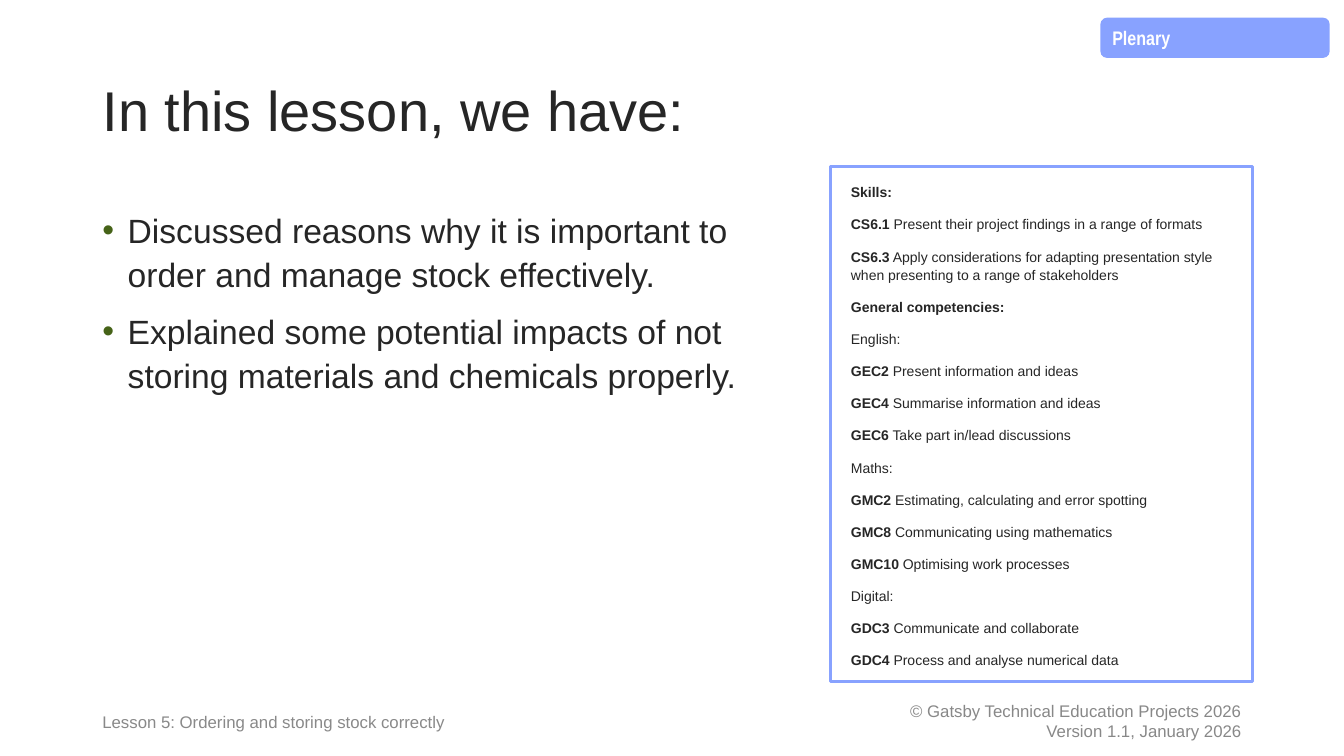
from lxml import etree
from pptx import Presentation, util as u
from pptx.dml.color import RGBColor
from pptx.enum import shapes, text
from pptx.oxml import ns

INK = RGBColor(0x26, 0x26, 0x26)
WHITE = RGBColor(0xFF, 0xFF, 0xFF)
PERIWINKLE = RGBColor(0x88, 0xA2, 0xFF)
BULLET_GREEN = RGBColor(0x46, 0x63, 0x18)
FOOTER_GREY = RGBColor(0x89, 0x89, 0x89)
COPYRIGHT_GREY = RGBColor(0x88, 0x88, 0x88)

SLIDE_WIDTH, SLIDE_HEIGHT = u.Inches(13.33), u.Inches(7.5)
COLUMNS, ROWS = 160, 90
BODY_SPACING = 1.08

LESSON_POINTS = [
    "Discussed reasons why it is important to order and manage stock effectively.",
    "Explained some potential impacts of not storing materials and chemicals properly.",
]
COMPETENCIES = [
    ("Skills:", ""),
    ("CS6.1", " Present their project findings in a range of formats"),
    ("CS6.3", " Apply considerations for adapting presentation style"
              " when presenting to a range of stakeholders"),
    ("General competencies:", ""),
    ("", "English:"),
    ("GEC2", " Present information and ideas"),
    ("GEC4", " Summarise information and ideas"),
    ("GEC6", " Take part in/lead discussions"),
    ("", "Maths:"),
    ("GMC2", " Estimating, calculating and error spotting"),
    ("GMC8", " Communicating using mathematics"),
    ("GMC10", " Optimising work processes"),
    ("", "Digital:"),
    ("GDC3", " Communicate and collaborate"),
    ("GDC4", " Process and analyse numerical data"),
]


def grid_box(column, row, columns, rows):
    cell_width, cell_height = SLIDE_WIDTH / COLUMNS, SLIDE_HEIGHT / ROWS
    return (round(column * cell_width), round(row * cell_height),
            round(columns * cell_width), round(rows * cell_height))


def place(shape, box):
    shape.left, shape.top, shape.width, shape.height = box


def prepare_frame(shape, anchor, inset_x=0.1, inset_y=0.05):
    frame = shape.text_frame
    frame.word_wrap = True
    frame.auto_size = text.MSO_AUTO_SIZE.NONE
    frame.vertical_anchor = anchor
    frame.margin_left = frame.margin_right = u.Inches(inset_x)
    frame.margin_top = frame.margin_bottom = u.Inches(inset_y)
    return frame


def add_paragraph(frame, index, spacing=BODY_SPACING, align=text.PP_ALIGN.LEFT, before=10):
    paragraph = frame.add_paragraph() if index else frame.paragraphs[0]
    paragraph.alignment = align
    paragraph.line_spacing = spacing
    paragraph.space_before = u.Pt(before if index else 0)
    paragraph.space_after = u.Pt(0)
    return paragraph


def add_run(paragraph, words, size, colour, bold=False, font_name="Arial"):
    run = paragraph.add_run()
    run.text = words
    run.font.name = font_name
    run.font.size = u.Pt(size)
    run.font.bold = bold
    run.font.color.rgb = colour


def add_bullet(paragraph, colour):
    properties = paragraph._p.get_or_add_pPr()
    properties.set("marL", str(u.Inches(0.25)))
    properties.set("indent", str(-u.Inches(0.25)))
    bullet_colour = etree.SubElement(properties, ns.qn("a:buClr"))
    etree.SubElement(bullet_colour, ns.qn("a:srgbClr"), val=str(colour))
    etree.SubElement(properties, ns.qn("a:buFont"), typeface="Arial")
    etree.SubElement(properties, ns.qn("a:buChar"), char="•")


def add_panel(slide, kind, box, fill):
    shape = slide.shapes.add_shape(kind, *box)
    shape.shadow.inherit = False
    shape.fill.solid()
    shape.fill.fore_color.rgb = fill
    return shape


def add_section_tag(slide, box):
    tag = add_panel(slide, shapes.MSO_SHAPE.FLOWCHART_ALTERNATE_PROCESS, box, PERIWINKLE)
    tag.line.fill.background()
    frame = prepare_frame(tag, text.MSO_ANCHOR.TOP)
    add_run(add_paragraph(frame, 0), "Plenary", 14, WHITE, True, "Arial Narrow")


def fill_title(slide, box):
    title = slide.shapes.title
    place(title, box)
    frame = prepare_frame(title, text.MSO_ANCHOR.MIDDLE)
    add_run(add_paragraph(frame, 0, 0.9), "In this lesson, we have:", 40, INK)


def fill_lesson_points(slide, box):
    body = slide.placeholders[1]
    place(body, box)
    frame = prepare_frame(body, text.MSO_ANCHOR.TOP)
    for index, point in enumerate(LESSON_POINTS):
        paragraph = add_paragraph(frame, index)
        add_bullet(paragraph, BULLET_GREEN)
        add_run(paragraph, point, 24, INK)


def add_competency_panel(slide, box):
    panel = add_panel(slide, shapes.MSO_SHAPE.RECTANGLE, box, WHITE)
    panel.line.color.rgb = PERIWINKLE
    panel.line.width = u.Pt(2.25)
    frame = prepare_frame(panel, text.MSO_ANCHOR.TOP, 0.2, 0.16)
    for index, (code, description) in enumerate(COMPETENCIES):
        paragraph = add_paragraph(frame, index)
        for words, bold in ((code, True), (description, False)):
            if words:
                add_run(paragraph, words, 10, INK, bold)


def add_footer(slide, box, lines, colour, align, spacing):
    footer = slide.shapes.add_textbox(*box)
    frame = prepare_frame(footer, text.MSO_ANCHOR.MIDDLE)
    for index, line in enumerate(lines):
        add_run(add_paragraph(frame, index, spacing, align, 0), line, 12, colour)


def build_plenary_slide(presentation):
    slide = presentation.slides.add_slide(presentation.slide_layouts[1])
    add_footer(slide, grid_box(95, 83.4, 54, 4.8),
               ["© Gatsby Technical Education Projects 2026", "Version 1.1, January 2026"],
               COPYRIGHT_GREY, text.PP_ALIGN.RIGHT, 1.0)
    add_section_tag(slide, grid_box(131, 2.1, 27.3, 4.8))
    fill_title(slide, grid_box(11, 4.8, 138, 17.4))
    fill_lesson_points(slide, grid_box(11, 24, 84, 57.1))
    add_competency_panel(slide, grid_box(98.9, 19.8, 50.2, 61.3))
    add_footer(slide, grid_box(11, 83.4, 55.2, 4.8),
               ["Lesson 5: Ordering and storing stock correctly"],
               FOOTER_GREY, text.PP_ALIGN.LEFT, BODY_SPACING)


def main():
    presentation = Presentation()
    presentation.slide_width = SLIDE_WIDTH
    presentation.slide_height = SLIDE_HEIGHT
    build_plenary_slide(presentation)
    presentation.save("out.pptx")


if __name__ == "__main__":
    main()
